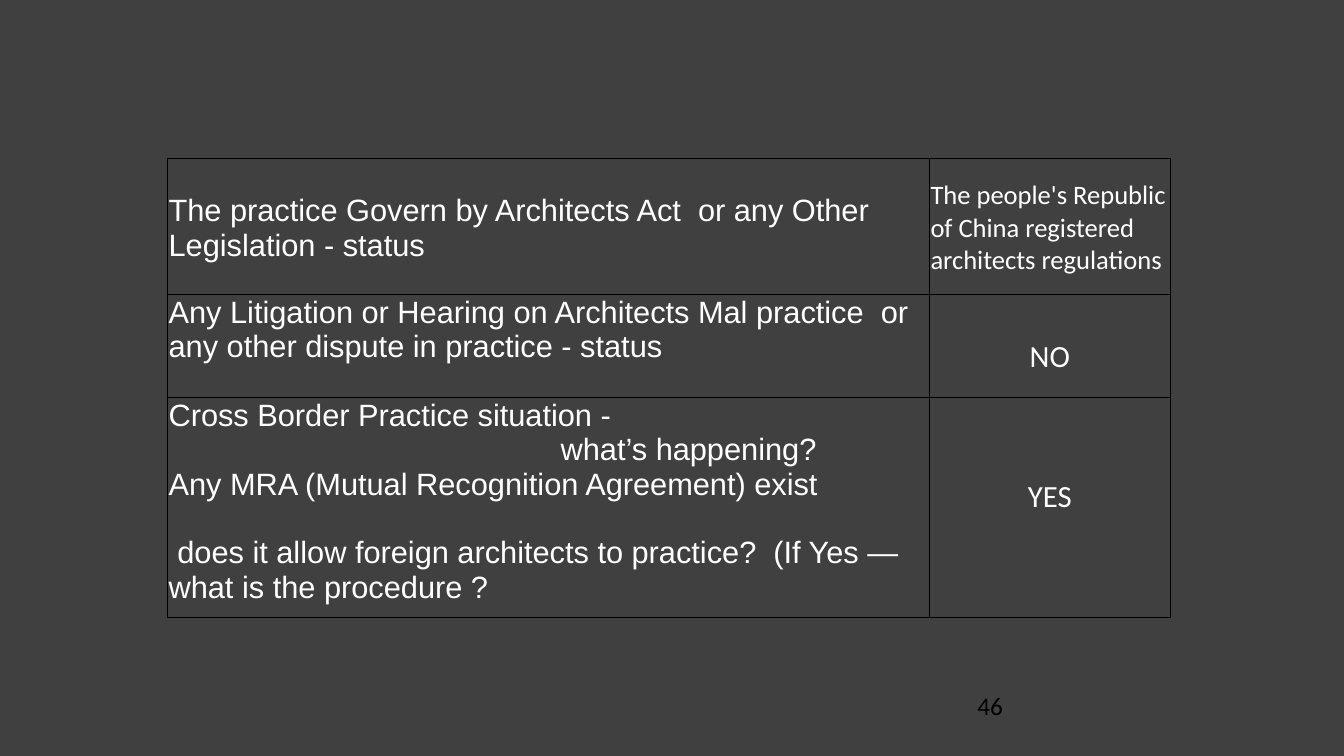
import pptx
import pptx.dml.color
import pptx.enum.shapes
import pptx.enum.text
import pptx.oxml
import pptx.oxml.ns
import pptx.util
from pptx.util import Cm, Pt

CHARCOAL = pptx.dml.color.RGBColor(0x40, 0x40, 0x40)
WHITE = pptx.dml.color.RGBColor(0xFF, 0xFF, 0xFF)
BLACK = pptx.dml.color.RGBColor(0, 0, 0)
CENTER = pptx.enum.text.PP_ALIGN.CENTER
LEFT = pptx.enum.text.PP_ALIGN.LEFT
SIDE = 0.03  # cell side margin in cm

# Each cell: paragraphs, font name, size, alignment, top margin in cm
ROWS = [
    [(["The practice Govern by Architects Act  or any Other Legislation - status"],
      "Arial", 22, LEFT, 0.89),
     (["The people's Republic of China registered architects regulations"],
      "Calibri", 19, LEFT, 0.53)],
    [(["Any Litigation or Hearing on Architects Mal practice  or "
       "any other dispute in practice - status"], "Arial", 22, LEFT, 0.03),
     (["NO"], "Calibri", 22, CENTER, 1.1)],
    [(["Cross Border Practice situation -",
       "what’s happening?",
       "Any MRA (Mutual Recognition Agreement) exist",
       "does it allow foreign architects to practice?  (If Yes — what is the procedure ?"],
      "Arial", 22, LEFT, 0.03),
     (["YES"], "Calibri", 22, CENTER, 2.03)],
]
COLUMN_WIDTHS = [19.2, 6.07]
ROW_HEIGHTS = [3.42, 2.59, 5.28]


class SlideBuilder:
    def __init__(self, deck):
        self.page = deck.slides.add_slide(deck.slide_layouts[6])

    def backdrop(self, width, height):
        box = self.page.shapes.add_shape(
            pptx.enum.shapes.MSO_SHAPE.RECTANGLE, 0, 0, width, height)
        box.shadow.inherit = False
        box.fill.solid()
        box.fill.fore_color.rgb = CHARCOAL
        box.line.fill.background()

    def style(self, para, font, size, color):
        para.font.name = font
        para.font.size = Pt(size)
        para.font.color.rgb = color

    def label(self, text, left, top, width, height):
        box = self.page.shapes.add_textbox(Cm(left), Cm(top), Cm(width), Cm(height))
        box.text_frame.word_wrap = True
        para = box.text_frame.paragraphs[0]
        para.text = text
        self.style(para, "Calibri", 18, BLACK)

    def border(self, cell):
        properties = cell._tc.get_or_add_tcPr()
        for position, side in enumerate(("lnL", "lnR", "lnT", "lnB")):
            properties.insert(position, pptx.oxml.parse_xml(
                f'<a:{side} {pptx.oxml.ns.nsdecls("a")} w="{Pt(1)}">'
                f'<a:solidFill><a:srgbClr val="{BLACK}"/></a:solidFill></a:{side}>'))

    def fill_cell(self, cell, lines, font, size, alignment, top):
        cell.fill.background()
        self.border(cell)
        cell.margin_left = cell.margin_right = Cm(SIDE)
        cell.margin_top, cell.margin_bottom = Cm(top), 0
        cell.text = "\n".join(lines)
        for para in cell.text_frame.paragraphs:
            para.alignment = alignment
            self.style(para, font, size, WHITE)

    def table(self, left, top):
        frame = self.page.shapes.add_table(
            len(ROWS), len(COLUMN_WIDTHS), Cm(left), Cm(top),
            Cm(sum(COLUMN_WIDTHS)), Cm(sum(ROW_HEIGHTS)))
        grid = frame.table
        grid.first_row = grid.horz_banding = False
        for column, width in zip(grid.columns, COLUMN_WIDTHS):
            column.width = Cm(width)
        for row, height, contents in zip(grid.rows, ROW_HEIGHTS, ROWS):
            row.height = Cm(height)
            for cell, content in zip(row.cells, contents):
                self.fill_cell(cell, *content)
        return grid


def indent(para, left, first_line):
    properties = para._p.get_or_add_pPr()
    properties.set("marL", str(Cm(left)))
    properties.set("indent", str(Cm(first_line)))


def main():
    deck = pptx.Presentation()
    deck.slide_width, deck.slide_height = Cm(33.87), Cm(19.05)
    builder = SlideBuilder(deck)
    builder.backdrop(deck.slide_width, deck.slide_height)
    builder.label("46", 24.38, 17.27, 7.9, 1.32)
    grid = builder.table(4.22, 4.0)

    cross_border = grid.cell(2, 0).text_frame.paragraphs
    indent(cross_border[1], 9.88, 0)
    indent(cross_border[3], 0, 0.22)
    cross_border[3].space_before = Pt(24.5)
    deck.save("out.pptx")


if __name__ == "__main__":
    main()
